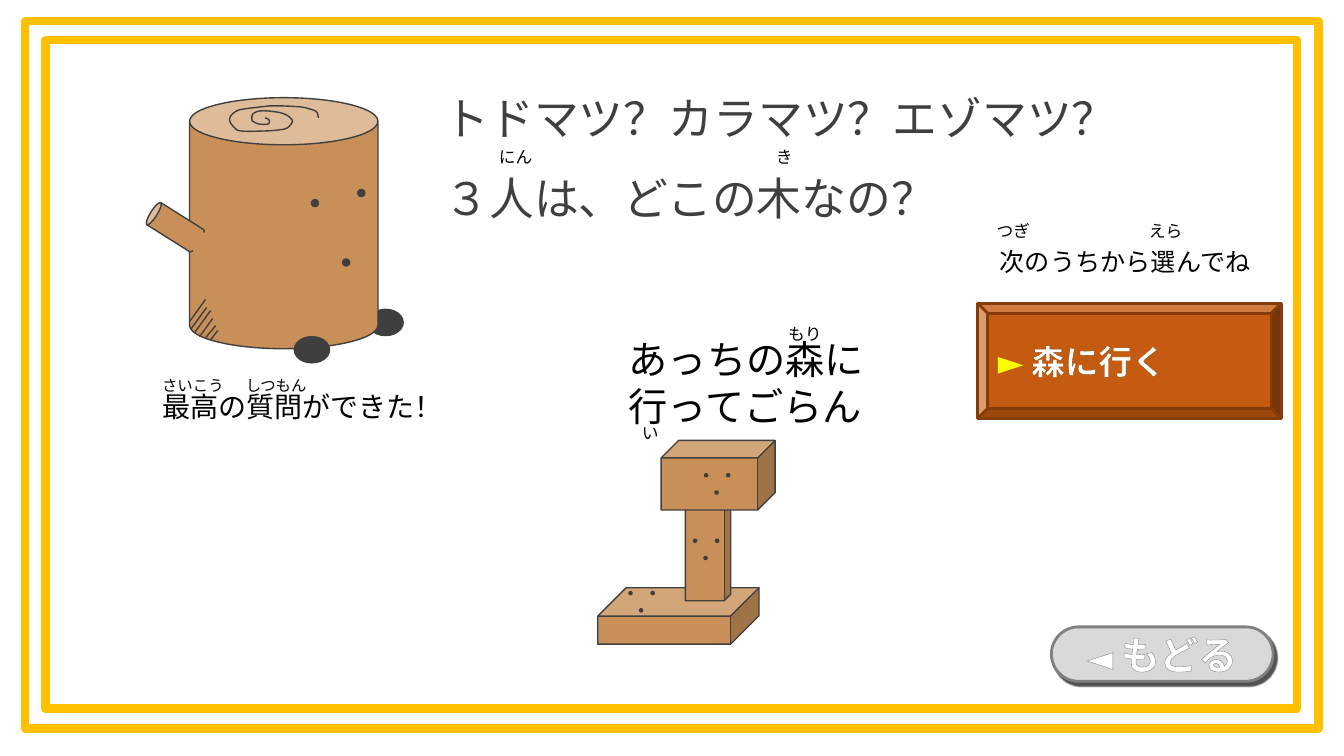
from lxml.etree import SubElement
from pptx import Presentation
from pptx.dml.color import RGBColor
from pptx.enum.shapes import MSO_CONNECTOR, MSO_SHAPE
from pptx.enum.text import MSO_ANCHOR, MSO_AUTO_SIZE, PP_ALIGN
from pptx.oxml.ns import qn
from pptx.util import Pt

COLORS = {
    "frame": "FFC000", "wood": "C89058", "ink": "3F3F3F", "cube_edge": "404040",
    "black": "000000", "white": "FFFFFF", "yellow": "FFFF00",
    "button": "C55A11", "button_edge": "843C0B", "button_outline": "8E4700",
    "pill": "D9D9D9", "pill_edge": "808080",
}
LATIN, JAPANESE = "Arial", "Noto Sans CJK JP"

# Turns of the growth ring on the log's top, from the centre outwards
RING = [
    (189.4, 84.2), (192.2, 85.7), (191.5, 88.6), (185, 88.6), (181.4, 87.1),
    (180, 85.7), (180.7, 81.4), (186.5, 79.2), (196.6, 79.9), (203, 81.4),
    (207.4, 84.2), (208.8, 87.1), (205.2, 91.4), (198.7, 92.9), (188.6, 93.6),
    (172.1, 93.6), (167, 90.7), (164.2, 86.4), (164.9, 82.8), (169.2, 79.2),
    (174.9, 77.8), (187.2, 76.3), (195.8, 75.6), (213.8, 76.3), (221, 77.8),
    (226.1, 79.9), (227.5, 84.2),
]
HATCHING = [
    (146.9, 213.8, 135.4, 229.7), (147.6, 219.6, 136.1, 235.4),
    (150.5, 221.8, 139, 237.6), (151.9, 227.5, 142.6, 240.5),
    (154.1, 232.6, 146.9, 241.2), (155.5, 236.2, 150.5, 242.6),
]
READINGS = [
    ("にん", 349.2, 101.5, 59, 12), ("き", 547.2, 101.5, 59, 12),
    ("さいこう", 108.7, 265, 81.4, 11), ("しつもん", 168.5, 265, 76.3, 11),
    ("もり", 555.8, 227.5, 59, 12), ("い", 451.4, 298.1, 59, 12),
    ("つぎ", 704.9, 154.1, 39, 12), ("えら", 813.6, 154.1, 46.8, 12),
]


def color(name):
    return RGBColor.from_string(COLORS[name])


def apply_format(target, values):
    for name, value in values.items():
        setattr(target, name, value)


def set_line(line, name, width):
    line.color.rgb = color(name)
    line.width = Pt(width)


def add_figure(shapes, kind, box, fill=None, edge=None, width=1, adjust=None, rotation=0):
    figure = shapes.add_shape(kind, *map(Pt, box))
    figure.shadow.inherit = False
    figure.rotation = rotation
    if adjust is not None:
        figure.adjustments[0] = adjust
    if fill:
        figure.fill.solid()
        figure.fill.fore_color.rgb = color(fill)
    else:
        figure.fill.background()
    if edge:
        set_line(figure.line, edge, width)
    else:
        figure.line.fill.background()
    return figure


def add_run(paragraph, text, size, ink, latin=LATIN, bold=False, outline=None):
    run = paragraph.add_run()
    run.text = text
    apply_format(run.font, {"size": Pt(size), "bold": bold, "name": latin})
    run.font.color.rgb = color(ink)
    props = run.font._element
    SubElement(props, qn("a:ea")).set("typeface", JAPANESE)
    if outline:
        name, width = outline
        stroke = SubElement(props, qn("a:ln"), w=str(Pt(width)))
        solid = SubElement(stroke, qn("a:solidFill"))
        SubElement(solid, qn("a:srgbClr"), val=COLORS[name])
        props.insert(0, stroke)


def write_lines(frame, lines, size, ink, spacing=None):
    for index, text in enumerate(lines):
        paragraph = frame.add_paragraph() if index else frame.paragraphs[0]
        apply_format(paragraph, {"alignment": PP_ALIGN.LEFT, "line_spacing": spacing})
        add_run(paragraph, text, size, ink)


def add_words(shapes, lines, box, size):
    frame = shapes.add_textbox(*map(Pt, box)).text_frame
    apply_format(frame, {"word_wrap": True, "auto_size": MSO_AUTO_SIZE.SHAPE_TO_FIT_TEXT})
    write_lines(frame, lines, size, "black")


def add_hatch(shapes, ends):
    stroke = shapes.add_connector(MSO_CONNECTOR.STRAIGHT, *map(Pt, ends))
    set_line(stroke.line, "ink", 1)
    SubElement(stroke._element.spPr, qn("a:effectLst"))


def smooth_points(points, steps=5):
    """Catmull-Rom curve through all the points."""
    padded = [points[0], *points, points[-1]]
    curve = [points[0]]
    for a, b, c, d in zip(padded, padded[1:], padded[2:], padded[3:]):
        for step in range(1, steps + 1):
            t = step / steps
            curve.append(tuple(
                q + t * (r - p) / 2 + t**2 * (2 * p - 5 * q + 4 * r - s) / 2
                + t**3 * (3 * q - p - 3 * r + s) / 2
                for p, q, r, s in zip(a, b, c, d)))
    return curve


def add_ring(shapes):
    start, *rest = [(Pt(x), Pt(y)) for x, y in smooth_points(RING)]
    builder = shapes.build_freeform(*start)
    builder.add_line_segments(rest, close=False)
    ring = builder.convert_to_shape()
    ring.shadow.inherit = False
    ring.fill.background()
    set_line(ring.line, "ink", 1)


def add_dots(shapes, places, size):
    for x, y in places:
        add_figure(shapes, MSO_SHAPE.OVAL, (x, y, size, size), "ink", "ink")


def add_log(slide):
    log = slide.shapes.add_group_shape().shapes
    add_figure(log, MSO_SHAPE.OVAL, (262.8, 221, 25.2, 18.7), "ink", "ink")
    add_figure(log, MSO_SHAPE.CAN, (135.4, 69.8, 134.6, 179.3), "wood", "ink", adjust=0.25)
    add_dots(log, [(222.5, 142.6), (255.6, 135.4), (244.8, 185)], 5)
    add_figure(log, MSO_SHAPE.OVAL, (210.2, 240.5, 25.2, 18.7), "ink", "ink")
    for ends in HATCHING:
        add_hatch(log, ends)
    add_ring(log)
    # Branch, with a patch that hides its joint
    add_figure(log, MSO_SHAPE.CAN, (115.9, 141.8, 18.7, 41), "wood", "ink",
               adjust=0.25, rotation=302.2)
    add_figure(log, MSO_SHAPE.OVAL, (133.9, 166.3, 25.2, 15.8), "wood", rotation=10.7)


def add_block_figure(slide):
    for box, depth in [((427, 419.8, 115.2, 40.3), 0.503),
                       ((489.6, 331.9, 32.4, 97.2), 0.145),
                       ((472.3, 314.6, 81.4, 49.7), 0.25)]:
        add_figure(slide.shapes, MSO_SHAPE.CUBE, box, "wood", "cube_edge", adjust=depth)
    for x, y in [(503.3, 338.4), (449.3, 422.6), (495.4, 385.2)]:
        face = slide.shapes.add_group_shape().shapes
        add_dots(face, [(x, y), (x + 15.8, y), (x + 7.5, y + 12.3)], 2.2)


def add_title(slide):
    title = slide.shapes.title
    apply_format(title, {"left": Pt(310.3), "top": Pt(41.8),
                         "width": Pt(565.2), "height": Pt(123.8)})
    apply_format(title.text_frame, {"vertical_anchor": MSO_ANCHOR.TOP, "word_wrap": True,
                                    "auto_size": MSO_AUTO_SIZE.NONE})
    write_lines(title.text_frame, ["トドマツ？カラマツ？エゾマツ？", "３人は、どこの木なの？"],
                32, "ink", 1.5)


def label_button(button, align, runs):
    frame = button.text_frame
    frame.vertical_anchor = MSO_ANCHOR.MIDDLE
    frame.paragraphs[0].alignment = align
    for text, size, ink, outline in runs:
        add_run(frame.paragraphs[0], text, size, ink, JAPANESE, True, outline)


def add_shadow(shape):
    effects = shape._element.spPr.find(qn("a:effectLst"))
    shadow = SubElement(effects, qn("a:outerShdw"), blurRad=str(Pt(1)), dist=str(Pt(3)),
                        dir=str(50 * 60000), algn="tl", rotWithShape="0")
    tint = SubElement(shadow, qn("a:srgbClr"), val=COLORS["black"])
    SubElement(tint, qn("a:alpha"), val="68000")


def add_buttons(slide):
    forest = add_figure(slide.shapes, MSO_SHAPE.BEVEL, (698.4, 216.7, 216.7, 82.1),
                        "button", "button_edge", 2, adjust=0.088)
    label_button(forest, PP_ALIGN.LEFT, [("►", 24, "yellow", ("button_outline", 1)),
                                         (" 森に行く", 24, "white", ("button_outline", 1))])
    back = add_figure(slide.shapes, MSO_SHAPE.ROUNDED_RECTANGLE, (751, 447.8, 158.4, 38.9),
                      "pill", "pill_edge", 2, adjust=0.5)
    add_shadow(back)
    label_button(back, PP_ALIGN.CENTER, [("◄ ", 24, "white", ("pill_edge", 1)),
                                         ("もどる", 28, "white", ("pill_edge", 1.5))])


def main():
    deck = Presentation()
    apply_format(deck, {"slide_width": Pt(960), "slide_height": Pt(540)})
    slide = deck.slides.add_slide(deck.slide_layouts[5])

    # Double border
    for box in [(18, 15.1, 923.8, 505.4), (32.4, 28.8, 894.2, 477.4)]:
        add_figure(slide.shapes, MSO_SHAPE.RECTANGLE, box, edge="frame", width=6)

    # Characters
    add_log(slide)
    add_block_figure(slide)

    # Sentences and their readings
    add_title(slide)
    add_words(slide.shapes, ["あっちの森に", "行ってごらん"], (442.1, 236.2, 216, 74.9), 28)
    add_words(slide.shapes, ["最高の質問ができた！"], (108.7, 275, 216, 31.7), 20)
    add_words(slide.shapes, ["次のうちから選んでね"], (707, 172.1, 200.9, 28.8), 18)
    for reading, x, y, width, size in READINGS:
        add_words(slide.shapes, [reading], (x, y, width, 21.6), size)

    # Choices
    add_buttons(slide)
    deck.save("out.pptx")


if __name__ == "__main__":
    main()
